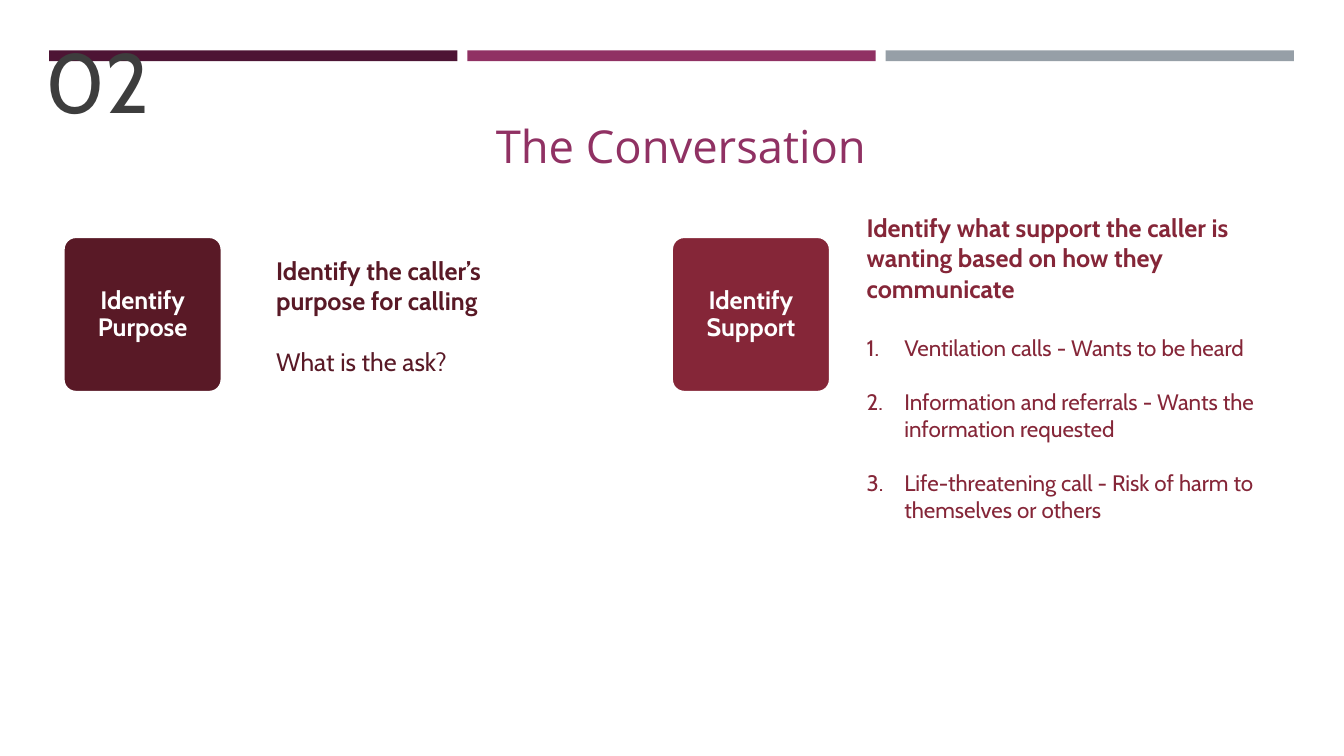
"""Build the slide on identifying a caller's purpose and support needs."""
from dataclasses import dataclass

from lxml import etree
from pptx import Presentation
from pptx import util as u
from pptx.dml.color import RGBColor
from pptx.enum import shapes, text
from pptx.oxml import ns

PLUM = RGBColor(0x4D, 0x14, 0x34)
MAGENTA = RGBColor(0x90, 0x31, 0x63)
GREY = RGBColor(0x96, 0x9F, 0xA7)
CHARCOAL = RGBColor(0x3D, 0x3D, 0x3D)
MAROON = RGBColor(0x59, 0x19, 0x26)
CRIMSON = RGBColor(0x85, 0x26, 0x38)
WHITE = RGBColor(0xFF, 0xFF, 0xFF)

BODY_FONT = "Cabin"
TITLE_FONT = "Open Sans"
LINE_RATIO = 1.215
NUMBER_INDENT = u.Cm(0.95)


@dataclass(frozen=True)
class Box:
    """Position and size in centimetres."""
    left: float
    top: float
    width: float
    height: float

    def lengths(self) -> tuple:
        """Return the four lengths for python-pptx."""
        return tuple(u.Cm(v) for v in (self.left, self.top, self.width, self.height))


@dataclass(frozen=True)
class Line:
    """One paragraph of an explanation."""
    wording: str
    size: float = 18
    bold: bool = False
    numbered: bool = False


@dataclass(frozen=True)
class Step:
    """A coloured card with its explanation."""
    label: str
    card_left: float
    color: RGBColor
    details_box: Box
    details: tuple


STEPS = (
    Step("Identify Purpose", 1.6, MAROON, Box(6.71, 6.3, 7.92, 3.33), (
        Line("Identify the caller’s purpose for calling", bold=True),
        Line("What is the ask?"),
    )),
    Step("Identify Support", 16.93, CRIMSON, Box(21.59, 5.23, 11.1, 8.13), (
        Line("Identify what support the caller is wanting based on how they communicate",
             bold=True),
        Line("Ventilation calls - Wants to be heard", 16, numbered=True),
        Line("Information and referrals - Wants the information requested", 16, numbered=True),
        Line("Life-threatening call - Risk of harm to themselves or others", 16, numbered=True),
    )),
)


def format_paragraph(paragraph, size: float, color: RGBColor,
                     font: str = BODY_FONT, bold: bool = False) -> None:
    """Format every run of a paragraph."""
    for run in paragraph.runs:
        run.font.name = font
        run.font.size = u.Pt(size)
        run.font.bold = bold
        run.font.color.rgb = color


def number_paragraph(paragraph) -> None:
    """Give a paragraph a hanging automatic number."""
    properties = paragraph._p.get_or_add_pPr()
    properties.set("marL", str(NUMBER_INDENT))
    properties.set("indent", str(-NUMBER_INDENT))
    numbering = etree.SubElement(properties, ns.qn("a:buAutoNum"))
    numbering.set("type", "arabicPeriod")


def add_filled(slide, kind, box: Box, color: RGBColor):
    """Add a filled shape without shadow or outline."""
    shape = slide.shapes.add_shape(kind, *box.lengths())
    shape.shadow.inherit = False
    shape.fill.solid()
    shape.fill.fore_color.rgb = color
    shape.line.fill.background()
    return shape


def add_bars(slide) -> None:
    """Draw the three bars along the top."""
    for column, color in enumerate((PLUM, MAGENTA, GREY)):
        bar = Box(1.24 + column * 10.54, 1.27, 10.29, 0.27)
        add_filled(slide, shapes.MSO_SHAPE.RECTANGLE, bar, color)


def set_title(slide) -> None:
    """Place and format the title."""
    title = slide.shapes.title
    title.left, title.top, title.width, title.height = Box(11.56, 3.0, 11.2, 1.68).lengths()
    title.fill.solid()
    title.fill.fore_color.rgb = WHITE
    frame = title.text_frame
    frame.text = "The Conversation"
    frame.auto_size = text.MSO_AUTO_SIZE.NONE
    frame.vertical_anchor = text.MSO_ANCHOR.TOP
    heading = frame.paragraphs[0]
    heading.alignment = text.PP_ALIGN.CENTER
    heading.line_spacing = 0.9
    format_paragraph(heading, 32.4, MAGENTA, TITLE_FONT)


def add_lines(slide, box: Box, lines: tuple, color: RGBColor) -> None:
    """Add a text box whose paragraphs are one line apart."""
    frame = slide.shapes.add_textbox(*box.lengths()).text_frame
    frame.word_wrap = True
    frame.text = "\n".join(line.wording for line in lines)
    previous = None
    for paragraph, line in zip(frame.paragraphs, lines):
        if previous:
            paragraph.space_before = u.Pt(round(previous.size * LINE_RATIO, 1))
        if line.numbered:
            number_paragraph(paragraph)
        format_paragraph(paragraph, line.size, color, bold=line.bold)
        previous = line


def add_step(slide, step: Step) -> None:
    """Draw a card and the explanation beside it."""
    card = add_filled(slide, shapes.MSO_SHAPE.ROUNDED_RECTANGLE,
                      Box(step.card_left, 5.97, 3.99, 3.91), step.color)
    card.adjustments[0] = 0.08
    card.line.color.rgb = WHITE
    card.line.width = u.Pt(1.75)
    frame = card.text_frame
    frame.text = step.label
    frame.word_wrap = True
    frame.vertical_anchor = text.MSO_ANCHOR.MIDDLE
    frame.margin_left = frame.margin_right = u.Cm(0.18)
    frame.margin_top = frame.margin_bottom = u.Cm(0.18)
    label = frame.paragraphs[0]
    label.alignment = text.PP_ALIGN.CENTER
    label.line_spacing = 0.9
    format_paragraph(label, 18, WHITE, bold=True)
    add_lines(slide, step.details_box, step.details, step.color)


def main() -> None:
    """Build and save the presentation."""
    deck = Presentation()
    deck.slide_width, deck.slide_height = u.Cm(33.87), u.Cm(19.05)
    slide = deck.slides.add_slide(deck.slide_layouts[5])
    add_bars(slide)
    set_title(slide)
    add_lines(slide, Box(0.89, 0.61, 3.58, 2.82), (Line("02", 60),), CHARCOAL)
    for step in STEPS:
        add_step(slide, step)
    deck.save("out.pptx")


if __name__ == "__main__":
    main()
